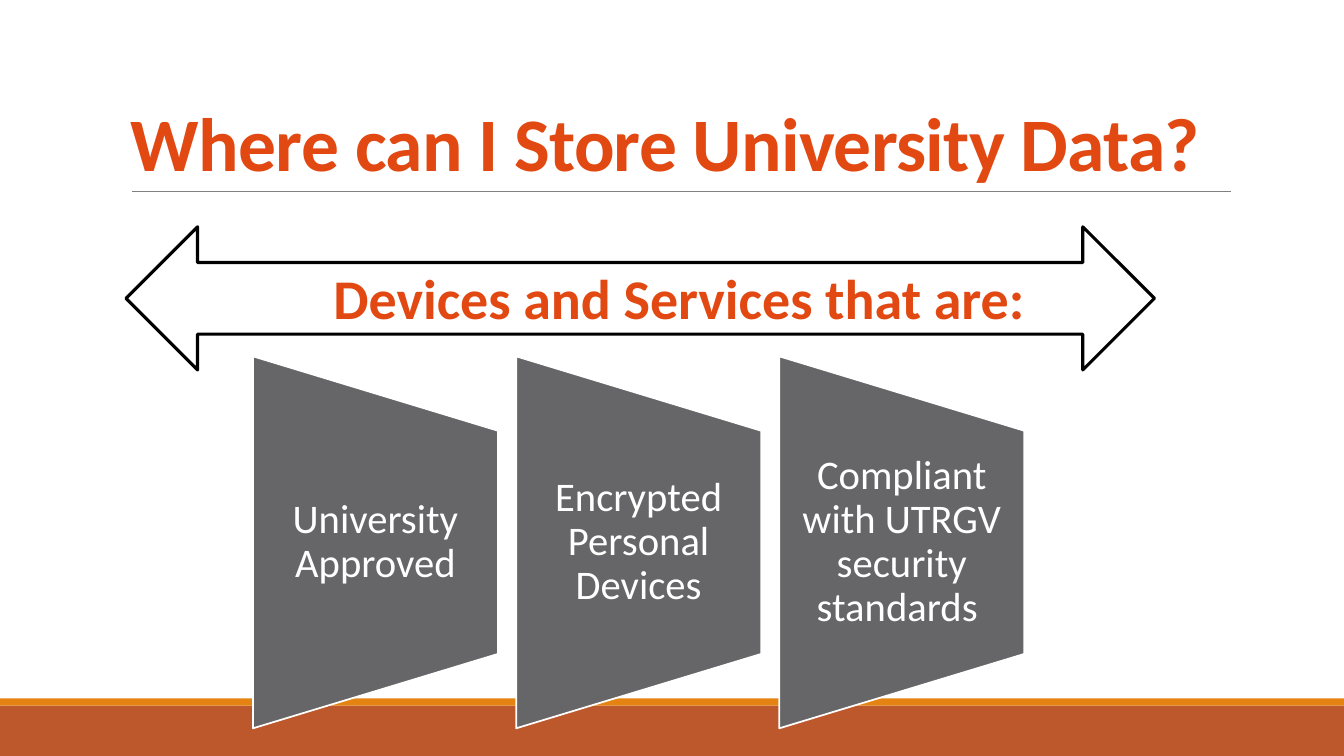
from lxml import etree
from pptx import Presentation
from pptx import util as u
from pptx.dml.color import RGBColor
from pptx.enum import shapes, text
from pptx.oxml import ns

WHITE = RGBColor(0xFF, 0xFF, 0xFF)
BLACK = RGBColor(0, 0, 0)
ORANGE = RGBColor(0xE2, 0x49, 0x12)
RUST = RGBColor(0xBD, 0x58, 0x2C)
AMBER = RGBColor(0xE4, 0x83, 0x12)
GRAY = RGBColor(0x80, 0x80, 0x80)
SLATE = RGBColor(0x66, 0x66, 0x68)

deck = Presentation()
deck.slide_width = u.Inches(13.33)
deck.slide_height = u.Inches(7.5)
slide = deck.slides.add_slide(deck.slide_layouts[6])


def draw(kind, box, fill, line=None, width=0):
    shape = slide.shapes.add_shape(kind, *map(u.Inches, box))
    shape.shadow.inherit = False
    shape.fill.solid()
    shape.fill.fore_color.rgb = fill
    if line is None:
        shape.line.fill.background()
    else:
        shape.line.color.rgb = line
        shape.line.width = u.Pt(width)
    return shape


def write(words, box, size, color, align, anchor, space=1.0, bold=False):
    label = slide.shapes.add_textbox(*map(u.Inches, box))
    frame = label.text_frame
    frame.word_wrap = True
    frame.vertical_anchor = anchor
    para = frame.paragraphs[0]
    para.text = words
    para.alignment = align
    para.line_spacing = space
    para.font.name = "Calibri"
    para.font.size = u.Pt(size)
    para.font.bold = bold
    para.font.color.rgb = color
    return frame


KIND = shapes.MSO_SHAPE
ALIGN = text.PP_ALIGN
ANCHOR = text.MSO_ANCHOR

draw(KIND.RECTANGLE, (0, 7, 13.33, 0.5), RUST)
draw(KIND.RECTANGLE, (0, 6.93, 13.33, 0.07), AMBER)

rule = slide.shapes.add_connector(
    shapes.MSO_CONNECTOR.STRAIGHT, *map(u.Inches, (1.31, 1.9, 12.21, 1.9)))
rule.line.color.rgb = GRAY
rule.line.width = u.Pt(0.5)
etree.SubElement(rule._element.spPr, ns.qn("a:effectLst"))

draw(KIND.LEFT_RIGHT_ARROW, (1.25, 2.25, 10.2, 1.42), WHITE, BLACK, 2.25)
banner = write("Devices and Services that are:", (3.02, 2.57, 7.43, 0.77),
               40, ORANGE, ALIGN.CENTER, ANCHOR.TOP, bold=True)
banner.auto_size = text.MSO_AUTO_SIZE.SHAPE_TO_FIT_TEXT

LEFT, STEP = 2.51, 2.61
WIDE, TALL, MID = 2.43, 3.69, 5.38
rules = ["University Approved", "Encrypted Personal Devices",
         "Compliant with UTRGV security standards "]
for i, words in enumerate(rules):
    left = LEFT + i * STEP
    panel = draw(KIND.FLOWCHART_MANUAL_OPERATION,
                 (left + (WIDE - TALL) / 2, MID - WIDE / 2, TALL, WIDE),
                 SLATE, WHITE, 1.25)
    panel.rotation = 270
    frame = write(words, (left, MID - TALL * 0.3, WIDE, TALL * 0.6),
                  29, WHITE, ALIGN.CENTER, ANCHOR.MIDDLE, 0.9)
    frame.margin_left = frame.margin_right = u.Inches(0.2)
    frame.margin_top = frame.margin_bottom = 0

title = write("Where can I Store University Data?", (1.2, 0.31, 11, 1.59),
              54, ORANGE, ALIGN.LEFT, ANCHOR.BOTTOM, 0.85, True)
title.paragraphs[0].runs[0]._r.get_or_add_rPr().set("spc", "-50")

for frame in (banner, title):
    props = frame.paragraphs[0].runs[0]._r.get_or_add_rPr()
    edge = etree.SubElement(props, ns.qn("a:ln"), w=str(u.Pt(0.75)))
    fill = etree.SubElement(edge, ns.qn("a:solidFill"))
    etree.SubElement(fill, ns.qn("a:srgbClr"), val=str(WHITE))

deck.save("out.pptx")
